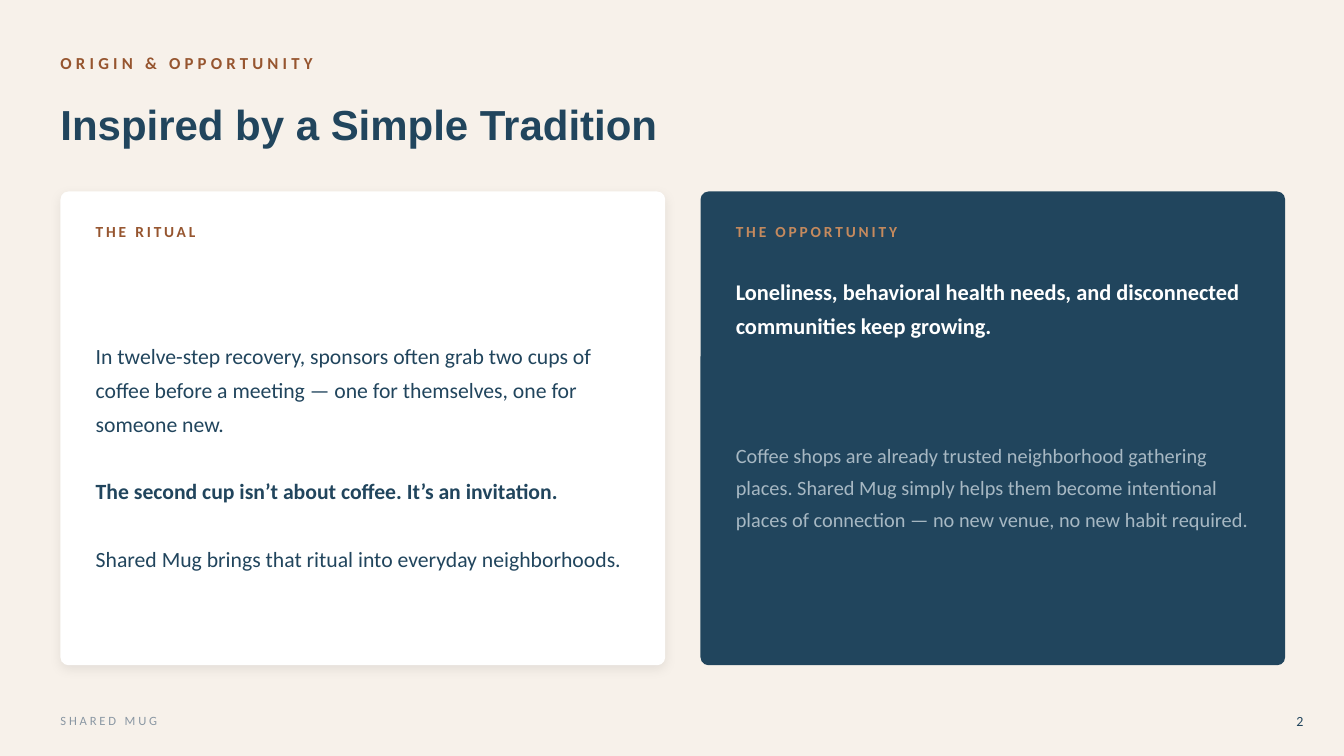
from dataclasses import dataclass

from lxml import etree
from pptx import Presentation
from pptx.dml.color import RGBColor
from pptx.enum.shapes import MSO_SHAPE
from pptx.enum.text import MSO_ANCHOR, PP_ALIGN
from pptx.oxml.ns import qn
from pptx.shapes.autoshape import Shape
from pptx.slide import Slide
from pptx.util import Pt

ROUNDED = MSO_SHAPE.ROUNDED_RECTANGLE
MIDDLE = MSO_ANCHOR.MIDDLE
LEFT, RIGHT = PP_ALIGN.LEFT, PP_ALIGN.RIGHT


@dataclass(frozen=True)
class Theme:
    cream: str = "F7F1EA"
    navy: str = "21455D"
    white: str = "FFFFFF"
    rust: str = "96552F"
    copper: str = "C58A5E"
    mist: str = "A7B8C3"
    gray: str = "8A97A3"
    heading_font: str = "Arial"
    body_font: str = "Calibri"
    title_size: float = 30
    lead_size: float = 16
    ritual_size: float = 15.5
    detail_size: float = 14.5
    eyebrow_size: float = 12
    label_size: float = 11
    page_size: float = 10
    footer_size: float = 9


THEME = Theme()
MARGIN = 43.2
CARD_TOP, CARD_HEIGHT, CARD_PADDING = 136.8, 338.4, 25.2
LABEL_TOP, LABEL_WIDTH, LABEL_HEIGHT = 154.8, 360, 21.6
FOOTER_TOP, FOOTER_HEIGHT = 504, 21.6


@dataclass(frozen=True)
class Line:
    text: str
    bold: bool = False


@dataclass(frozen=True)
class Passage:
    lines: tuple[Line, ...]
    top: float
    width: float
    height: float
    size: float
    color: str
    line_spacing: float
    gap: float = 0


@dataclass(frozen=True)
class Card:
    label: str
    left: float
    width: float
    fill: str
    label_color: str
    shadowed: bool
    passages: tuple[Passage, ...]


CARDS = (
    Card("THE RITUAL", MARGIN, 432, THEME.white, THEME.rust, True, (
        Passage((
            Line("In twelve-step recovery, sponsors often grab two cups of coffee "
                 "before a meeting — one for themselves, one for someone new."),
            Line("The second cup isn’t about coffee. It’s an invitation.", bold=True),
            Line("Shared Mug brings that ritual into everyday neighborhoods."),
        ), 183.6, 381.6, 280.8, THEME.ritual_size, THEME.navy, 1.3, gap=24.2),
    )),
    Card("THE OPPORTUNITY", 500.4, 417.6, THEME.navy, THEME.copper, False, (
        Passage((
            Line("Loneliness, behavioral health needs, and disconnected "
                 "communities keep growing.", bold=True),
        ), 187.2, 367.2, 61.2, THEME.lead_size, THEME.white, 1.25),
        Passage((
            Line("Coffee shops are already trusted neighborhood gathering places. "
                 "Shared Mug simply helps them become intentional places of "
                 "connection — no new venue, no new habit required."),
        ), 255.6, 367.2, 180, THEME.detail_size, THEME.mist, 1.3),
    )),
)


def add_text(slide: Slide, lines: tuple[Line, ...], left: float, top: float,
             width: float, height: float, *, size: float, color: str,
             font: str = THEME.body_font, tracking: float = 0,
             line_spacing: float = 1, gap: float = 0,
             align: PP_ALIGN = LEFT) -> None:
    """Add an inset-free text box; tracking is letter spacing in points."""
    box = slide.shapes.add_textbox(Pt(left), Pt(top), Pt(width), Pt(height))
    frame = box.text_frame
    frame.word_wrap = True
    frame.vertical_anchor = MIDDLE
    frame.margin_left = frame.margin_top = frame.margin_right = frame.margin_bottom = 0
    for index, line in enumerate(lines):
        paragraph = frame.add_paragraph() if index else frame.paragraphs[0]
        paragraph.alignment = align
        paragraph.line_spacing = line_spacing
        if index:
            paragraph.space_before = Pt(gap)
        run = paragraph.add_run()
        run.text = line.text
        run.font.name = font
        run.font.size = Pt(size)
        run.font.bold = line.bold
        run.font.color.rgb = RGBColor.from_string(color)
        if tracking:
            run._r.get_or_add_rPr().set("spc", str(int(tracking * 100)))


def add_soft_shadow(shape: Shape) -> None:
    effects = shape._element.spPr.find(qn("a:effectLst"))
    shadow = etree.SubElement(effects, qn("a:outerShdw"), blurRad=str(Pt(8)),
                              dist=str(Pt(3)), dir="5400000", algn="bl",
                              rotWithShape="0")
    color = etree.SubElement(shadow, qn("a:srgbClr"), val="000000")
    etree.SubElement(color, qn("a:alpha"), val="8000")


def add_card(slide: Slide, card: Card) -> None:
    panel = slide.shapes.add_shape(ROUNDED, Pt(card.left), Pt(CARD_TOP),
                                   Pt(card.width), Pt(CARD_HEIGHT))
    panel.adjustments[0] = 0.017
    panel.fill.solid()
    panel.fill.fore_color.rgb = RGBColor.from_string(card.fill)
    panel.line.fill.background()
    panel.shadow.inherit = False
    if card.shadowed:
        add_soft_shadow(panel)

    text_left = card.left + CARD_PADDING
    add_text(slide, (Line(card.label, bold=True),), text_left, LABEL_TOP,
             LABEL_WIDTH, LABEL_HEIGHT, size=THEME.label_size,
             color=card.label_color, tracking=2)
    for passage in card.passages:
        add_text(slide, passage.lines, text_left, passage.top, passage.width,
                 passage.height, size=passage.size, color=passage.color,
                 line_spacing=passage.line_spacing, gap=passage.gap)


def main() -> None:
    presentation = Presentation()
    presentation.slide_width, presentation.slide_height = Pt(960), Pt(540)
    slide = presentation.slides.add_slide(presentation.slide_layouts[6])
    slide.background.fill.solid()
    slide.background.fill.fore_color.rgb = RGBColor.from_string(THEME.cream)

    add_text(slide, (Line("ORIGIN & OPPORTUNITY", bold=True),), MARGIN, 32.4, 576, 25.2,
             size=THEME.eyebrow_size, color=THEME.rust, tracking=3)
    add_text(slide, (Line("Inspired by a Simple Tradition", bold=True),),
             MARGIN, 61.2, 612, 54, size=THEME.title_size, color=THEME.navy,
             font=THEME.heading_font)
    for card in CARDS:
        add_card(slide, card)
    add_text(slide, (Line("2"),), 895, FOOTER_TOP, 36, FOOTER_HEIGHT,
             size=THEME.page_size, color=THEME.navy, align=RIGHT)
    add_text(slide, (Line("SHARED MUG"),), MARGIN, FOOTER_TOP, 216, FOOTER_HEIGHT,
             size=THEME.footer_size, color=THEME.gray, tracking=2)
    presentation.save("out.pptx")


if __name__ == "__main__":
    main()
